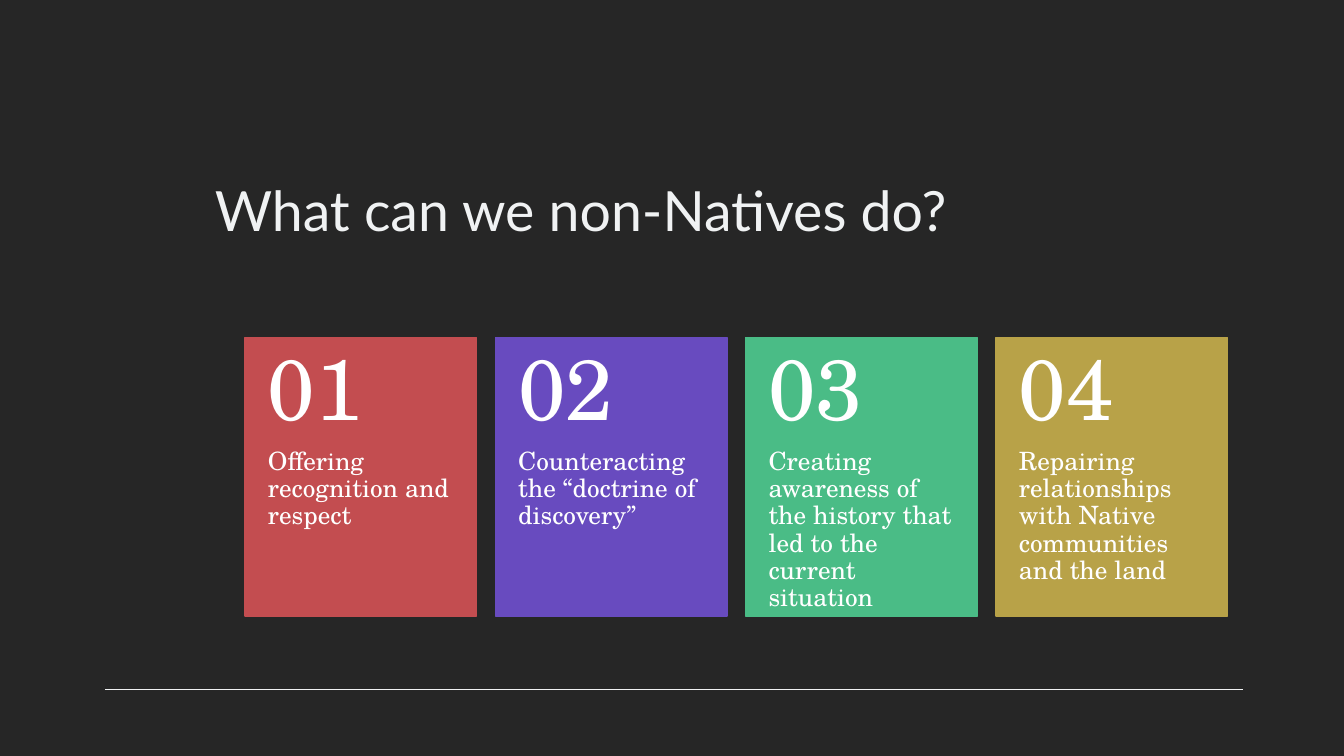
from lxml import etree
from pptx import Presentation, util as u
from pptx.dml.color import RGBColor
from pptx.enum import shapes, text
from pptx.oxml.ns import qn

DARK = RGBColor(0x26, 0x26, 0x26)
PALE = RGBColor(0xF0, 0xF2, 0xF3)
WHITE = RGBColor(0xFF, 0xFF, 0xFF)
RED = RGBColor(0xC3, 0x4D, 0x50)
PURPLE = RGBColor(0x68, 0x4B, 0xBF)
GREEN = RGBColor(0x4A, 0xBC, 0x86)
GOLD = RGBColor(0xB8, 0xA2, 0x48)

ACTIONS = [
    ("Offering recognition and respect", RED),
    ("Counteracting the “doctrine of discovery”", PURPLE),
    ("Creating awareness of the history that led to the current situation", GREEN),
    ("Repairing relationships with Native communities and the land", GOLD),
]
CARD_LEFT, CARD_TOP, CARD_PITCH = 175, 241.2, 178.8
CARD_WIDTH, CARD_HEIGHT, NUMBER_HEIGHT = 165.6, 198.8, 79.2


class Painter:
    title_font = "Lato"
    card_font = "TeX Gyre Schola"

    def __init__(self, page):
        self.page = page
        page.background.fill.solid()
        page.background.fill.fore_color.rgb = DARK

    def add_text(self, words, left, top, width, height, *, font, size, color=WHITE,
                 align=text.PP_ALIGN.LEFT, anchor=text.MSO_ANCHOR.TOP,
                 insets=(7.2, 3.6, 7.2, 3.6), spacing=1.0):
        """Add a wrapped text box; insets run left, top, right, bottom."""
        box = self.page.shapes.add_textbox(u.Pt(left), u.Pt(top), u.Pt(width), u.Pt(height))
        frame = box.text_frame
        frame.word_wrap = True
        frame.vertical_anchor = anchor
        (frame.margin_left, frame.margin_top,
         frame.margin_right, frame.margin_bottom) = map(u.Pt, insets)
        para = frame.paragraphs[0]
        para.alignment = align
        para.line_spacing = spacing
        span = para.add_run()
        span.text = words
        span.font.name = font
        span.font.size = u.Pt(size)
        span.font.color.rgb = color

    def add_rectangle(self, left, top, width, height, color):
        box = self.page.shapes.add_shape(shapes.MSO_SHAPE.RECTANGLE, u.Pt(left), u.Pt(top),
                                         u.Pt(width), u.Pt(height))
        box.shadow.inherit = False
        box.fill.solid()
        box.fill.fore_color.rgb = color
        box.line.color.rgb = color
        box.line.width = u.Pt(1)

    def add_rule(self, left, right, y):
        rule = self.page.shapes.add_connector(shapes.MSO_CONNECTOR.STRAIGHT, u.Pt(left), u.Pt(y),
                                              u.Pt(right), u.Pt(y))
        rule.line.color.rgb = PALE
        rule.line.width = u.Pt(0.85)
        etree.SubElement(rule._element.spPr, qn("a:effectLst"))

    def add_card(self, number, action, color):
        left = CARD_LEFT + (number - 1) * CARD_PITCH
        self.add_rectangle(left, CARD_TOP, CARD_WIDTH, CARD_HEIGHT, color)
        self.add_text(action, left, CARD_TOP + NUMBER_HEIGHT, CARD_WIDTH,
                      CARD_HEIGHT - NUMBER_HEIGHT, font=self.card_font, size=18,
                      insets=(16.4, 0, 16.4, 26), spacing=0.9)
        self.add_text(f"{number:02}", left, CARD_TOP, CARD_WIDTH, NUMBER_HEIGHT,
                      font=self.card_font, size=61, anchor=text.MSO_ANCHOR.MIDDLE,
                      insets=(16.4, 13, 16.4, 13), spacing=0.9)


def main():
    deck = Presentation()
    deck.slide_width, deck.slide_height = u.Pt(960), u.Pt(540)
    painter = Painter(deck.slides.add_slide(deck.slide_layouts[6]))
    painter.add_rule(75, 888, 492.4)
    painter.add_text("What can we non-Natives do?", 115.2, 69.2, 599, 108,
                     font=painter.title_font, size=39.6, color=PALE,
                     align=text.PP_ALIGN.CENTER, anchor=text.MSO_ANCHOR.BOTTOM)
    for number, (action, color) in enumerate(ACTIONS, 1):
        painter.add_card(number, action, color)
    deck.save("out.pptx")


if __name__ == "__main__":
    main()
